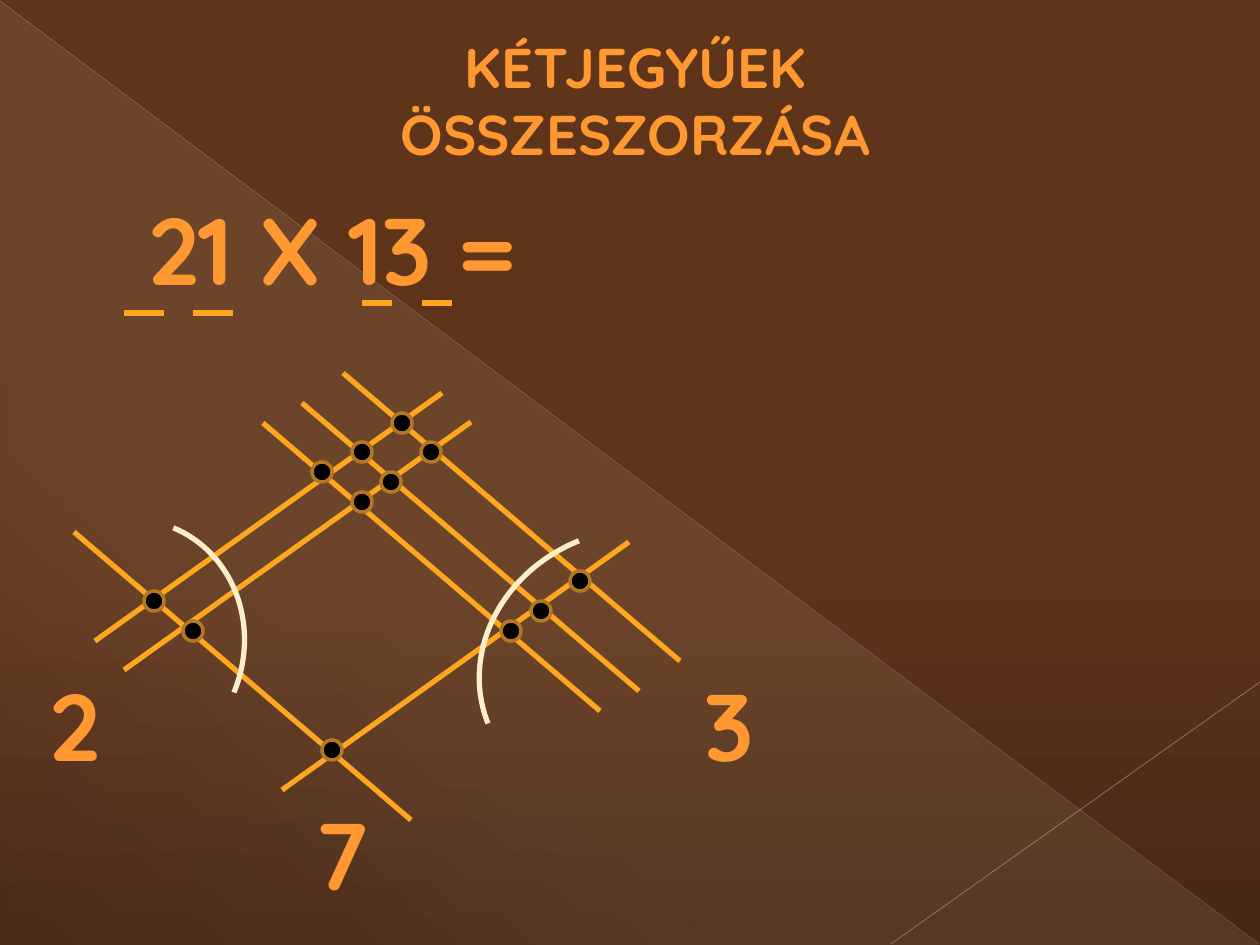
import dataclasses

import lxml.etree
import pptx
import pptx.dml.color
import pptx.enum.shapes
import pptx.enum.text
import pptx.oxml.ns
import pptx.util

EMU_PER_PX = 914400 / 126
SHAPES = pptx.enum.shapes.MSO_SHAPE
RISE = (347, -248)
FALL = (337, 288)
RISING_STARTS = [(95, 641), (124, 670), (282, 790)]
FALLING_STARTS = [(74, 532), (263, 423), (302, 403), (343, 373)]
DIGIT_MARKS = [(124, 313, 40), (193, 313, 40), (362, 303, 30), (422, 303, 30)]
CROSSINGS = [
    (154, 601), (193, 631), (332, 750),
    (322, 472), (362, 452), (402, 423),
    (362, 502), (391, 482), (431, 452),
    (511, 631), (541, 611), (580, 581),
]
GROUP_ARCS = [(494, 514, 271, 305, 248.1), (5, 518, 238, 258, 22.5)]
LABELS = [
    ("21 X 13 =", 112, 185, 441),
    ("2", 35, 661, 80),
    ("3", 689, 661, 80),
    ("7", 302, 790, 80),
]


@dataclasses.dataclass(frozen=True)
class Theme:
    """Colours, typeface and sizes of the slide."""

    font: str = "Quicksand"
    title_size: int = 32
    label_size: int = 54
    text: str = "FF9831"
    stick: str = "FFA51F"
    arc: str = "FBEEC9"
    dot: str = "000000"
    dot_edge: str = "B27822"
    stroke: float = 3
    dot_stroke: float = 2
    backdrop: tuple = ((60, "5E341B", 100), (100, "472715", 100))
    sheen: tuple = ((0, "FBEEC9", 10), (70, "FBEEC9", 8), (100, "FBEEC9", 1))


THEME = Theme()


def px(*lengths):
    """Convert pixel lengths to EMU."""
    return [pptx.util.Emu(round(length * EMU_PER_PX)) for length in lengths]


def rgb(code):
    """Turn a hex code into a colour."""
    return pptx.dml.color.RGBColor.from_string(code)


def add_child(parent, tag, **attributes):
    """Append a DrawingML element."""
    child = lxml.etree.SubElement(parent, pptx.oxml.ns.qn(tag))
    for name, value in attributes.items():
        child.set(name, str(value))
    return child


def set_gradient(fill, owner, stops, angle):
    """Give a fill its gradient stops and direction."""
    fill.gradient()
    gradient = owner.find(".//" + pptx.oxml.ns.qn("a:gradFill"))
    for child in list(gradient):
        gradient.remove(child)
    stop_list = add_child(gradient, "a:gsLst")
    for position, code, opacity in stops:
        stop = add_child(stop_list, "a:gs", pos=position * 1000)
        colour = add_child(stop, "a:srgbClr", val=code)
        add_child(colour, "a:alpha", val=opacity * 1000)
    add_child(gradient, "a:lin", ang=angle * 60000, scaled=0)


def set_line(line, code, width):
    """Set the colour and width of a line."""
    line.color.rgb = rgb(code)
    line.width = pptx.util.Pt(width)


def add_line(slide, start, end, code=THEME.stick, width=THEME.stroke, opacity=100):
    """Draw a straight line."""
    connector = slide.shapes.add_connector(
        pptx.enum.shapes.MSO_CONNECTOR.STRAIGHT, *px(*start, *end))
    set_line(connector.line, code, width)
    properties = connector.element.spPr
    if opacity < 100:
        colour = properties.find(".//" + pptx.oxml.ns.qn("a:srgbClr"))
        add_child(colour, "a:alpha", val=opacity * 1000)
    add_child(properties, "a:effectLst")


def add_background(slide):
    """Paint the backdrop, its lit corner and the two thin diagonals."""
    set_gradient(slide.background.fill, slide.element, THEME.backdrop, 90)
    sheen = slide.shapes.add_shape(SHAPES.RIGHT_TRIANGLE, *px(1, 2, 1258, 943))
    sheen.shadow.inherit = False
    set_gradient(sheen.fill, sheen.element, THEME.sheen, 133)
    sheen.line.fill.background()
    add_line(slide, (0, 1), (1259, 944), "BCB7B4", 0.39, 35)
    add_line(slide, (1260, 682), (891, 944), "C4BFBD", 0.47, 45)


def add_dot(slide, x, y, radius=10):
    """Mark a crossing of two sticks."""
    dot = slide.shapes.add_shape(
        SHAPES.OVAL, *px(x - radius, y - radius, 2 * radius, 2 * radius))
    dot.shadow.inherit = False
    dot.fill.solid()
    dot.fill.fore_color.rgb = rgb(THEME.dot)
    set_line(dot.line, THEME.dot_edge, THEME.dot_stroke)


def add_arc(slide, left, top, width, height, rotation):
    """Draw an arc separating groups of crossings."""
    arc = slide.shapes.add_shape(SHAPES.ARC, *px(left, top, width, height))
    arc.shadow.inherit = False
    arc.rotation = rotation
    arc.fill.background()
    set_line(arc.line, THEME.arc, THEME.stroke)


def set_text(shape, text, size, wrap):
    """Fill a shape with bold centred text."""
    frame = shape.text_frame
    frame.text = text
    frame.word_wrap = wrap
    frame.auto_size = pptx.enum.text.MSO_AUTO_SIZE.SHAPE_TO_FIT_TEXT
    frame.vertical_anchor = pptx.enum.text.MSO_ANCHOR.TOP
    paragraph = frame.paragraphs[0]
    paragraph.alignment = pptx.enum.text.PP_ALIGN.CENTER
    font = paragraph.runs[0].font
    font.name = THEME.font
    font.size = pptx.util.Pt(size)
    font.bold = True
    font.color.rgb = rgb(THEME.text)


def add_title(slide, text):
    """Place and format the title."""
    title = slide.shapes.title
    title.left, title.top, title.width, title.height = px(213, 26, 845, 81)
    set_text(title, text, THEME.title_size, True)


def add_label(slide, text, left, top, width):
    """Add a large number or formula."""
    label = slide.shapes.add_textbox(*px(left, top, width, 127))
    set_text(label, text, THEME.label_size, False)


def main():
    """Build the stick multiplication slide."""
    presentation = pptx.Presentation()
    presentation.slide_width, presentation.slide_height = px(1260, 945)
    slide = presentation.slides.add_slide(presentation.slide_layouts[5])
    add_background(slide)
    add_title(slide, "KÉTJEGYŰEK ÖSSZESZORZÁSA")
    for x, y, length in DIGIT_MARKS:
        add_line(slide, (x, y), (x + length, y))
    for starts, (dx, dy) in ((RISING_STARTS, RISE), (FALLING_STARTS, FALL)):
        for x, y in starts:
            add_line(slide, (x, y), (x + dx, y + dy))
    for arc in GROUP_ARCS:
        add_arc(slide, *arc)
    for crossing in CROSSINGS:
        add_dot(slide, *crossing)
    for label in LABELS:
        add_label(slide, *label)
    presentation.save("out.pptx")


if __name__ == "__main__":
    main()
